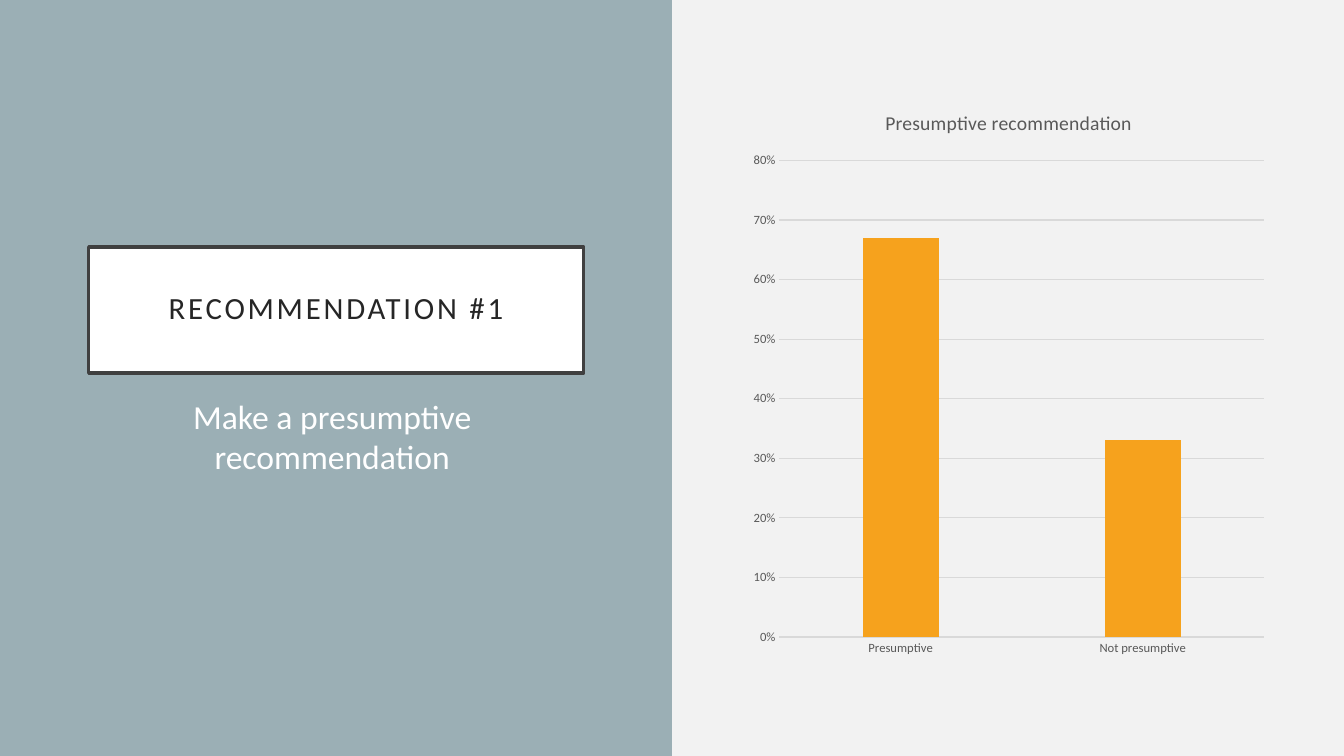
from dataclasses import dataclass

from pptx import Presentation
from pptx.chart.data import CategoryChartData
from pptx.dml.color import RGBColor
from pptx.enum.chart import XL_CHART_TYPE as ChartType, XL_TICK_MARK as TickMark
from pptx.enum.shapes import MSO_SHAPE as Preset
from pptx.enum.text import MSO_ANCHOR as Anchor, MSO_AUTO_SIZE as AutoSize, PP_ALIGN as Align
from pptx.util import Inches, Pt

WIDTH, HEIGHT = Inches(13.33), Inches(7.5)
FONT = "Calibri"
GRAY, RULE = "595959", "D9D9D9"


@dataclass(frozen=True)
class Area:
    left: float
    top: float
    width: float
    height: float

    def lengths(self) -> tuple[int, int, int, int]:
        return (round(self.left * WIDTH), round(self.top * HEIGHT),
                round(self.width * WIDTH), round(self.height * HEIGHT))


@dataclass(frozen=True)
class Caption:
    text: str
    size: float
    color: str
    anchor: Anchor
    inset_x: float
    inset_y: float
    line_spacing: float
    space_before: float


PANEL = Area(0, 0, 0.5, 1)
TITLE_AREA = Area(0.066, 0.3267, 0.3683, 0.1667)
BODY_AREA = Area(0.0915, 0.5173, 0.3113, 0.32)
CHART_AREA = Area(0.5529, 0.1173, 0.3953, 0.7653)

TITLE = Caption("RECOMMENDATION #1", 22, "262626", Anchor.MIDDLE, 0.2, 0.2, 0.9, 0)
BODY = Caption("Make a presumptive recommendation", 24, "FFFFFF", Anchor.TOP, 0.1, 0.05, 1, 10)
SHARES = {"Presumptive": 0.67, "Not presumptive": 0.33}


def rgb(color: str) -> RGBColor:
    return RGBColor.from_string(color)


def paint(fill, color: str) -> None:
    fill.solid()
    fill.fore_color.rgb = rgb(color)


def style_font(font, size: float, color: str) -> None:
    font.name = FONT
    font.size = Pt(size)
    font.bold = False
    font.color.rgb = rgb(color)


def style_line(line, color: str, width: float) -> None:
    line.color.rgb = rgb(color)
    line.width = Pt(width)


def place(shape, area: Area) -> None:
    shape.left, shape.top, shape.width, shape.height = area.lengths()


def write(shape, caption: Caption) -> None:
    frame = shape.text_frame
    frame.text = caption.text
    frame.word_wrap = True
    frame.auto_size = AutoSize.NONE
    frame.vertical_anchor = caption.anchor
    frame.margin_left = frame.margin_right = Inches(caption.inset_x)
    frame.margin_top = frame.margin_bottom = Inches(caption.inset_y)
    para = frame.paragraphs[0]
    para.alignment = Align.CENTER
    para.line_spacing = caption.line_spacing
    para.space_before = Pt(caption.space_before)
    style_font(para.font, caption.size, caption.color)


def add_panel(page):
    panel = page.shapes.add_shape(Preset.RECTANGLE, *PANEL.lengths())
    panel.shadow.inherit = False
    paint(panel.fill, "9BAFB5")
    panel.line.fill.background()
    return panel


def add_title(page, panel) -> None:
    title = page.shapes.title
    panel.element.addnext(title.element)
    place(title, TITLE_AREA)
    paint(title.fill, "FFFFFF")
    style_line(title.line, "404040", 2.5)
    write(title, TITLE)
    span = title.text_frame.paragraphs[0].runs[0]
    span.font._element.set("spc", "200")


def add_share_chart(page) -> None:
    data = CategoryChartData(number_format="0%")
    data.categories = list(SHARES)
    data.add_series("Series 1", list(SHARES.values()))
    chart = page.shapes.add_chart(ChartType.COLUMN_CLUSTERED, *CHART_AREA.lengths(), data).chart
    style_font(chart.font, 10, "000000")
    chart.has_legend = False
    chart.has_title = True
    heading = chart.chart_title.text_frame
    heading.text = "Presumptive recommendation"
    style_font(heading.paragraphs[0].font, 14, GRAY)

    plot = chart.plots[0]
    plot.vary_by_categories = False
    plot.gap_width, plot.overlap = 219, -27
    paint(plot.series[0].format.fill, "F6A21D")

    for axis in (chart.category_axis, chart.value_axis):
        axis.major_tick_mark = axis.minor_tick_mark = TickMark.NONE
        style_font(axis.tick_labels.font, 9, GRAY)
    style_line(chart.category_axis.format.line, RULE, 0.75)

    values = chart.value_axis
    values.minimum_scale, values.maximum_scale, values.major_unit = 0, 0.8, 0.1
    values.tick_labels.number_format = "0%"
    values.tick_labels.number_format_is_linked = False
    values.format.line.fill.background()
    style_line(values.major_gridlines.format.line, RULE, 0.75)


def main() -> None:
    deck = Presentation()
    deck.slide_width, deck.slide_height = WIDTH, HEIGHT
    page = deck.slides.add_slide(deck.slide_layouts.get_by_name("Title Only"))
    paint(page.background.fill, "F2F2F2")
    add_title(page, add_panel(page))
    write(page.shapes.add_textbox(*BODY_AREA.lengths()), BODY)
    add_share_chart(page)
    deck.save("out.pptx")


if __name__ == "__main__":
    main()
